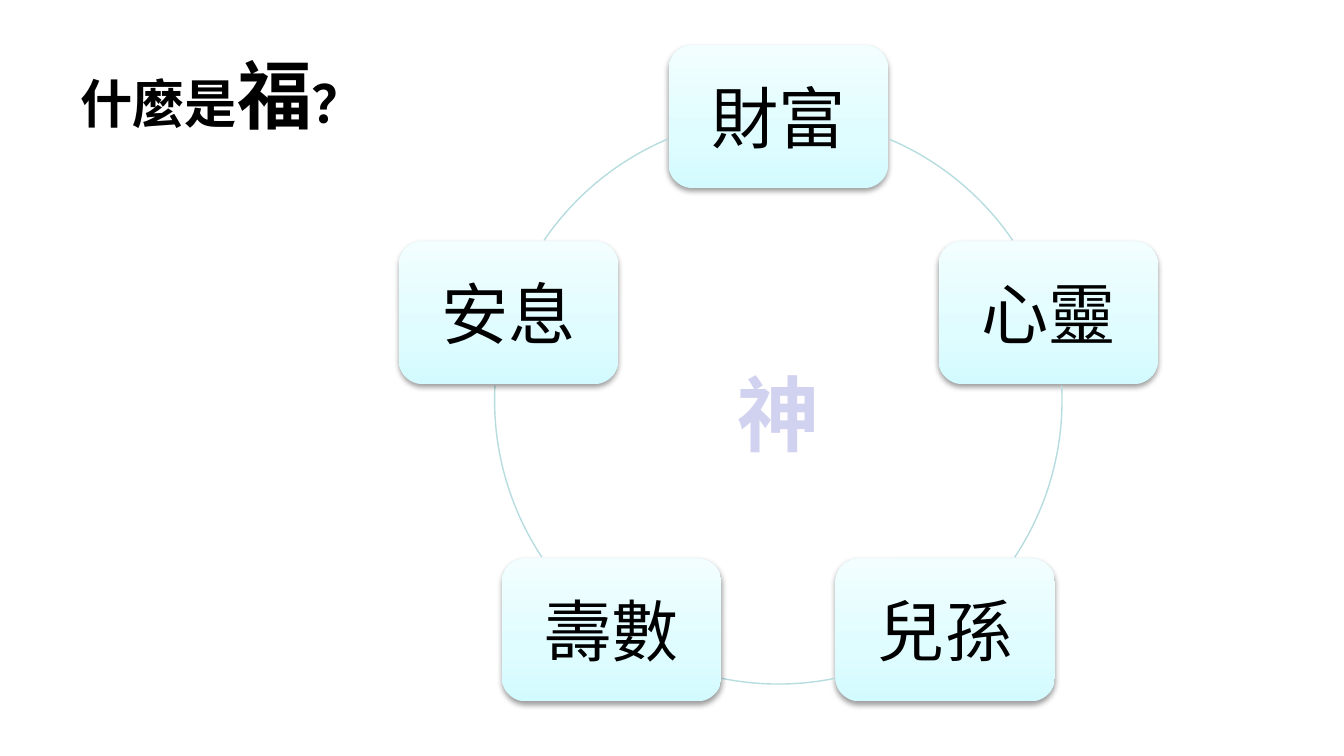
"""Build a slide with five blessings placed evenly around a circle."""
import copy
import math

import pptx
import pptx.dml.color
import pptx.enum.shapes
import pptx.enum.text
import pptx.oxml
import pptx.oxml.ns
import pptx.util

Pt = pptx.util.Pt
SHAPE = pptx.enum.shapes.MSO_SHAPE
ANCHOR = pptx.enum.text.MSO_ANCHOR
ALIGN = pptx.enum.text.PP_ALIGN
AUTO = pptx.enum.text.MSO_AUTO_SIZE

FONT = "Noto Sans CJK TC"
COLORS = {"text": "000000", "center": "D1D1F0", "arc": "B6DCDF", "shadow": "000000",
          "low": "D3FBFF", "mid": "DFFCFF", "high": "F2FEFF"}
CENTER_X, CENTER_Y, RADIUS = 417, 214.5, 152
BOX_W, BOX_H = 117.5, 76.5
BLESSINGS = [("財富", 293, 325.65), ("心靈", 357.02, 33.58), ("兒孫", 78.56, 101.45),
             ("壽數", 146.42, 182.98), ("安息", 214.35, 247)]


def rgb(name):
    return pptx.dml.color.RGBColor.from_string(COLORS[name])


def apply(obj, formats):
    for key, value in formats.items():
        setattr(obj, key, value)


def add_run(p, text, size, color="text", bold=False):
    r = p.add_run()
    r.text = text
    apply(r.font, {"size": Pt(size), "bold": bold, "name": FONT})
    r.font.color.rgb = rgb(color)
    ea = pptx.oxml.parse_xml(f'<a:ea {pptx.oxml.ns.nsdecls("a")} typeface="{FONT}"/>')
    r.font._element.find(pptx.oxml.ns.qn("a:latin")).addnext(ea)


def format_label(sp, left, top, width, height, runs):
    apply(sp, {"left": Pt(left), "top": Pt(top), "width": Pt(width), "height": Pt(height)})
    tf = sp.text_frame
    apply(tf, {"word_wrap": False, "auto_size": AUTO.SHAPE_TO_FIT_TEXT,
               "vertical_anchor": ANCHOR.TOP})
    p = tf.paragraphs[0]
    p.alignment = ALIGN.LEFT
    for text, size, color in runs:
        add_run(p, text, size, color, bold=True)


def set_gradient(fill):
    fill.gradient()
    fill.gradient_angle = 90
    gs_list = fill._xPr.find(".//" + pptx.oxml.ns.qn("a:gsLst"))
    gs_list.insert(1, copy.deepcopy(gs_list[0]))
    for stop, name, position in zip(fill.gradient_stops, ("low", "mid", "high"), (0, 0.35, 1)):
        stop.color.rgb = rgb(name)
        stop.position = position


def set_shadow(sp):
    sp.shadow.inherit = False
    effects = sp._element.spPr.find(pptx.oxml.ns.qn("a:effectLst"))
    effects.append(pptx.oxml.parse_xml(
        f'<a:outerShdw {pptx.oxml.ns.nsdecls("a")} blurRad="{Pt(3.1)}" dist="{Pt(1.6)}" '
        f'dir="5400000" rotWithShape="0"><a:srgbClr val="{COLORS["shadow"]}">'
        '<a:alpha val="38000"/></a:srgbClr></a:outerShdw>'))


def add_box(s, text, angle):
    x = CENTER_X + RADIUS * math.cos(math.radians(angle))
    y = CENTER_Y + RADIUS * math.sin(math.radians(angle))
    sp = s.shapes.add_shape(SHAPE.ROUNDED_RECTANGLE, Pt(x - BOX_W / 2), Pt(y - BOX_H / 2),
                            Pt(BOX_W), Pt(BOX_H))
    set_gradient(sp.fill)
    sp.line.fill.background()
    set_shadow(sp)
    tf = sp.text_frame
    apply(tf, {"word_wrap": True, "vertical_anchor": ANCHOR.MIDDLE})
    apply(tf, {f"margin_{side}": Pt(10.8) for side in ("left", "top", "right", "bottom")})
    p = tf.paragraphs[0]
    p.alignment = ALIGN.CENTER
    add_run(p, text, 36)


def add_arc(s, start, end):
    sp = s.shapes.add_shape(SHAPE.ARC, Pt(CENTER_X - RADIUS), Pt(CENTER_Y - RADIUS),
                            Pt(2 * RADIUS), Pt(2 * RADIUS))
    sp.adjustments[0], sp.adjustments[1] = start * 0.6, end * 0.6
    sp.fill.background()
    sp.line.color.rgb = rgb("arc")
    sp.line.width = Pt(0.75)
    sp.shadow.inherit = False


def main():
    prs = pptx.Presentation()
    apply(prs, {"slide_width": Pt(720), "slide_height": Pt(405)})
    s = prs.slides.add_slide(prs.slide_layouts[5])
    format_label(s.shapes.title, 36, 22.5, 166.5, 55.5,
                 [("什麼是", 28, "text"), ("福", 40, "text"), ("？", 28, "text")])
    for i, (text, start, end) in enumerate(BLESSINGS):
        add_box(s, text, 360 / len(BLESSINGS) * i - 90)
        add_arc(s, start, end)
    center = s.shapes.add_textbox(0, 0, 0, 0)
    format_label(center, 388, 191, 58.5, 60.5, [("神", 44, "center")])
    prs.save("out.pptx")


if __name__ == "__main__":
    main()
